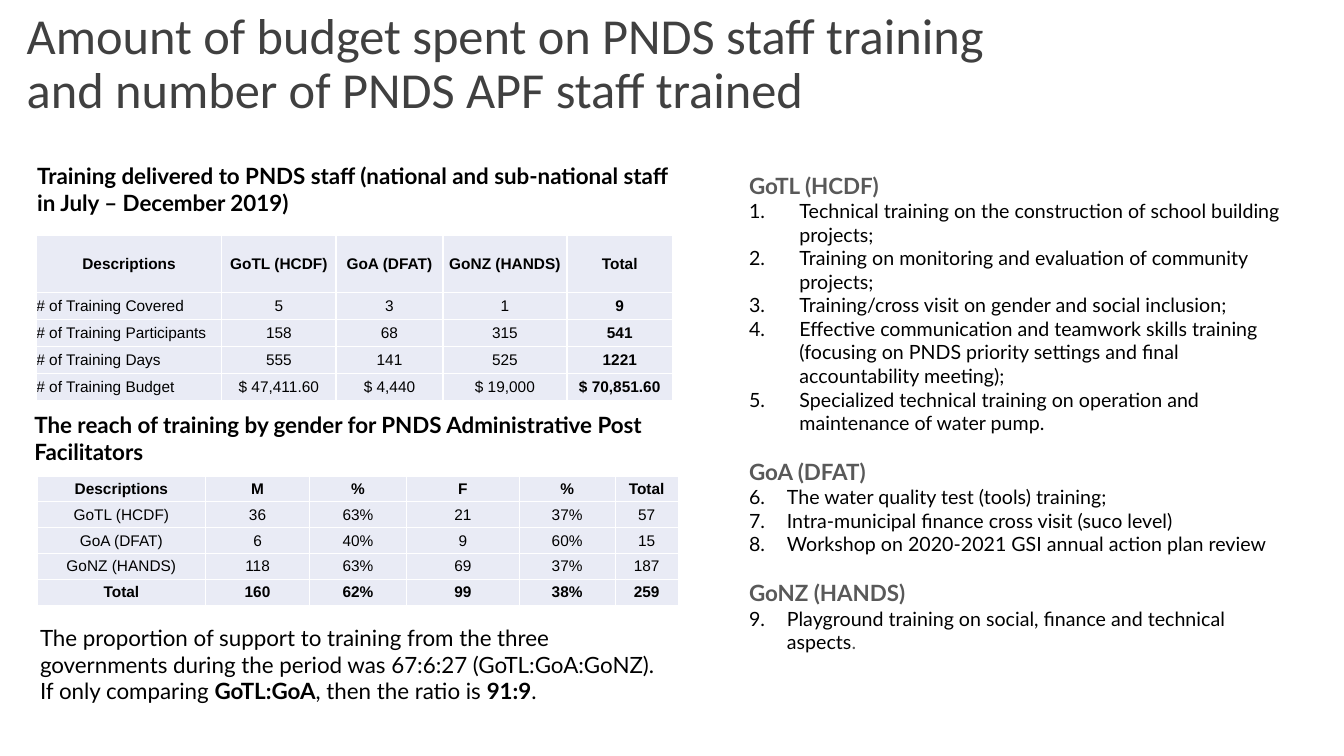
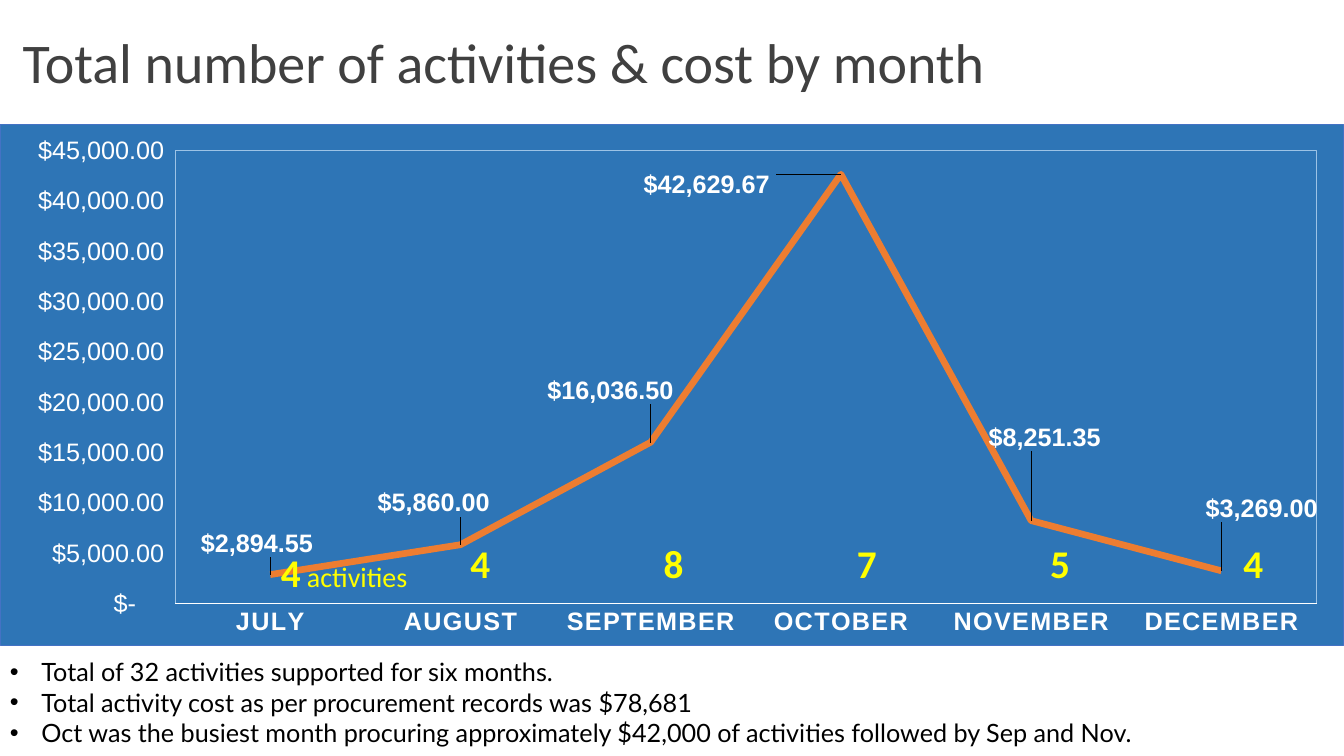
"""Build two slides on staff training budgets and monthly activity costs."""
from lxml.etree import SubElement
from pptx import Presentation
from pptx.chart.data import CategoryChartData
from pptx.dml.color import RGBColor
from pptx.enum.chart import XL_CHART_TYPE as ChartType, XL_LABEL_POSITION as LabelPos
from pptx.enum.chart import XL_TICK_MARK as TickMark
from pptx.enum.text import MSO_ANCHOR as Anchor, MSO_AUTO_SIZE as AutoSize, PP_ALIGN as Align
from pptx.oxml import parse_xml
from pptx.oxml.ns import nsdecls, qn
from pptx.util import Pt

BLACK, WHITE, DARK, GREY = "000000", "FFFFFF", "404040", "595959"
CELL, YELLOW, ORANGE = "E9EBF5", "FFFF00", "ED7D31"
CHART_BLUE, CHART_EDGE, PLOT_EDGE = "2E75B6", "4472C4", "9DC3E6"
MONEY = '_("$"* #,##0.00_);_("$"* \\(#,##0.00\\);_("$"* "-"??_);_(@_)'

STAFF_TITLE = "Amount of budget spent on PNDS staff training\vand number of PNDS APF staff trained"
DELIVERED = "Training delivered to PNDS staff (national and sub-national staff in July – December 2019)"
REACH = "The reach of training by gender for PNDS Administrative Post Facilitators"
PROPORTION = [
    "The proportion of support to training from the three governments during the period "
    "was 67:6:27 (GoTL:GoA:GoNZ).",
    [("If only comparing ", {}), ("GoTL:GoA", {"bold": True}), (", then the ratio is ", {}),
     ("91:9", {"bold": True}), (".", {})],
]
TRAINING = [
    ["Descriptions", "GoTL (HCDF)", "GoA (DFAT)", "GoNZ (HANDS)", "Total"],
    ["# of Training Covered", "5", "3", "1", "9"],
    ["# of Training Participants", "158", "68", "315", "541"],
    ["# of Training Days", "555", "141", "525", "1221"],
    ["# of Training Budget", "$ 47,411.60", "$ 4,440", "$ 19,000", "$ 70,851.60"],
]
GENDER = [
    ["Descriptions", "M", "%", "F", "%", "Total"],
    ["GoTL (HCDF)", "36", "63%", "21", "37%", "57"],
    ["GoA (DFAT)", "6", "40%", "9", "60%", "15"],
    ["GoNZ (HANDS)", "118", "63%", "69", "37%", "187"],
    ["Total", "160", "62%", "99", "38%", "259"],
]
COURSES = [
    ("GoTL (HCDF)", 36, [
        "Technical training on the construction of school building projects;",
        "Training on monitoring and evaluation of community projects;",
        "Training/cross visit on gender and social inclusion;",
        "Effective communication and teamwork skills training (focusing on PNDS priority "
        "settings and final accountability meeting);",
        "Specialized technical training on operation and maintenance of water pump."]),
    ("GoA (DFAT)", 27, [
        "The water quality test (tools) training;",
        "Intra-municipal finance cross visit (suco level)",
        "Workshop on 2020-2021 GSI annual action plan review"]),
    ("GoNZ (HANDS)", 27, [
        [("Playground training on social, finance and technical aspects", {}),
         (".", {"color": GREY})]]),
]

COST_TITLE = "Total number of activities & cost by month"
# month, cost, label shift as a share of the chart's width and height
MONTHS = [
    ("JULY", 2894.55, -0.01, -0.06),
    ("AUGUST", 5860, -0.02, -0.08),
    ("SEPTEMBER", 16036.5, -0.03, -0.1),
    ("OCTOBER", 42629.67, -0.1, 0.02),
    ("NOVEMBER", 8251.35, 0.01, -0.16),
    ("DECEMBER", 3269, 0.03, -0.12),
]
JULY_COUNT = [("4", {"bold": True}), (" activities", {"size": 20})]
LATER_COUNTS = ["4", "8", "7", "5", "4"]
FINDINGS = [
    "Total of 32 activities supported for six months.",
    "Total activity cost as per procurement records was $78,681",
    "Oct was the busiest month procuring approximately $42,000 of activities followed by "
    "Sep and Nov.",
]


def rgb(color):
    """Turn a hex string into a colour."""
    return RGBColor.from_string(color)


def style(font, size, color, bold=False, face="Lato"):
    """Format a font."""
    font.size, font.bold, font.name = Pt(size), bold, face
    font.color.rgb = rgb(color)


def write(paragraph, content, **look):
    """Fill a paragraph with a string or with (text, style changes) pairs."""
    if isinstance(content, str):
        paragraph.text = content
        for run in paragraph.runs:
            style(run.font, **look)
        return
    for text, changes in content:
        run = paragraph.add_run()
        run.text = text
        style(run.font, **{**look, **changes})


def add_text(slide, box, contents, anchor=Anchor.TOP, **look):
    """Add a text box with one paragraph per content and return its paragraphs."""
    frame = slide.shapes.add_textbox(*map(Pt, box)).text_frame
    frame.word_wrap, frame.vertical_anchor = True, anchor
    frame.auto_size = AutoSize.SHAPE_TO_FIT_TEXT
    for i, content in enumerate(contents):
        write(frame.add_paragraph() if i else frame.paragraphs[0], content, **look)
    return frame.paragraphs


def add_title(slide, left, text, size):
    """Add a slide title."""
    frame = slide.shapes.add_textbox(Pt(left), 0, Pt(960 - left), Pt(93)).text_frame
    frame.word_wrap, frame.vertical_anchor = True, Anchor.MIDDLE
    write(frame.paragraphs[0], text, size=size, color=DARK, face="Calibri")
    frame.paragraphs[0].line_spacing = 0.9


def hang(paragraph, indent, tag, **marker):
    """Give a paragraph a hanging indent and a bullet or number."""
    props = paragraph._p.get_or_add_pPr()
    props.set("marL", str(Pt(indent)))
    props.set("indent", str(-Pt(indent)))
    if tag == "a:buChar":
        SubElement(props, qn("a:buFont"), typeface="Arial")
    SubElement(props, qn(tag), **marker)


def add_grid(slide, left, top, widths, heights, rows, is_bold, is_left):
    """Add a table with white rules and evenly tinted cells."""
    table = slide.shapes.add_table(len(rows), len(widths), Pt(left), Pt(top),
                                   Pt(sum(widths)), Pt(sum(heights))).table
    table.first_row = table.horz_banding = False
    for column, width in zip(table.columns, widths):
        column.width = Pt(width)
    for r, row in enumerate(rows):
        table.rows[r].height = Pt(heights[r])
        for c, text in enumerate(row):
            cell = table.cell(r, c)
            cell.margin_left = cell.margin_right = cell.margin_top = cell.margin_bottom = 0
            cell.vertical_anchor = Anchor.MIDDLE
            for side in "LRTB":
                cell._tc.get_or_add_tcPr().append(
                    outline(WHITE, 1, f"a:ln{side}"))
            cell.fill.solid()
            cell.fill.fore_color.rgb = rgb(CELL)
            paragraph = cell.text_frame.paragraphs[0]
            write(paragraph, text, size=11, color=BLACK, bold=is_bold(r, c), face="Arial")
            paragraph.alignment = Align.LEFT if is_left(r, c) else Align.CENTER


def outline(color, width, tag="a:ln"):
    """Return a line element."""
    return parse_xml(f'<{tag} {nsdecls("a")} w="{Pt(width)}"><a:solidFill>'
                     f'<a:srgbClr val="{color}"/></a:solidFill></{tag}>')


def panel(fill, edge):
    """Return chart shape properties with a fill and an edge."""
    props = parse_xml(f'<c:spPr {nsdecls("c", "a")}><a:solidFill>'
                      f'<a:srgbClr val="{fill}"/></a:solidFill></c:spPr>')
    props.append(outline(edge, 0.75))
    return props


def manual_layout(x, y, extra=""):
    """Return a chart layout element."""
    return parse_xml(f'<c:layout {nsdecls("c")}><c:manualLayout>{extra}'
                     f'<c:x val="{x}"/><c:y val="{y}"/></c:manualLayout></c:layout>')


def add_cost_chart(slide):
    """Add the line chart of monthly cost."""
    data = CategoryChartData(number_format=MONEY)
    data.categories = [month for month, *_ in MONTHS]
    data.add_series("Series 1", [cost for _, cost, *_ in MONTHS])
    chart = slide.shapes.add_chart(ChartType.LINE, 0, Pt(88.5), Pt(960), Pt(373), data).chart
    chart.has_legend = chart.has_title = False
    style(chart.font, 8, "E7E6E6", face="Arial")

    months, costs = chart.category_axis, chart.value_axis
    costs.has_major_gridlines = False
    costs.minimum_scale, costs.maximum_scale, costs.major_unit = 0, 45000, 5000
    costs.tick_labels.number_format = MONEY
    costs.tick_labels.number_format_is_linked = False
    costs.format.line.fill.background()
    months.format.line.color.rgb = rgb(WHITE)
    months.format.line.width = Pt(1)
    for axis in (months, costs):
        axis.major_tick_mark = axis.minor_tick_mark = TickMark.NONE
        style(axis.tick_labels.font, 18, WHITE, axis is months, "Arial")
    for props in chart.element.xpath(".//c:catAx//a:defRPr"):
        props.set("spc", "100")

    plot = chart.plots[0]
    plot.vary_by_categories = False
    cost_line = plot.series[0]
    cost_line.smooth = False
    cost_line.format.line.color.rgb = rgb(ORANGE)
    cost_line.format.line.width = Pt(4.75)
    labels = cost_line.data_labels
    labels.show_value, labels.position = True, LabelPos.CENTER
    labels.number_format, labels.number_format_is_linked = MONEY, False
    style(labels.font, 18, WHITE, True, "Arial")
    for i in range(len(MONTHS)):
        label = cost_line.points[i].data_label
        label.position = LabelPos.CENTER
        style(label.font, 18, WHITE, True, "Arial")
    for index, (*_, dx, dy) in zip(chart.element.xpath(".//c:dLbl/c:idx"), MONTHS):
        index.addnext(manual_layout(dx, dy))

    area = chart.element.xpath(".//c:plotArea")[0]
    for old in area.xpath("./c:layout"):
        area.remove(old)
    frame = manual_layout(0.13, 0.05, '<c:layoutTarget val="inner"/>'
                          '<c:xMode val="edge"/><c:yMode val="edge"/>')
    for tag, share in (("c:w", 0.85), ("c:h", 0.87)):
        SubElement(frame[0], qn(tag), val=str(share))
    area.insert(0, frame)
    area.append(panel(CHART_BLUE, PLOT_EDGE))
    chart.element.xpath("./c:chart")[0].addnext(panel(CHART_BLUE, CHART_EDGE))


def add_courses(slide):
    """Add the numbered list of courses under each funder."""
    frame = slide.shapes.add_textbox(Pt(528), Pt(119.5), Pt(405), Pt(353.5)).text_frame
    frame.word_wrap, frame.auto_size = True, AutoSize.SHAPE_TO_FIT_TEXT
    number = 1
    for funder, indent, courses in COURSES:
        heading = frame.paragraphs[0] if number == 1 else frame.add_paragraph()
        write(heading, funder, size=16, color=GREY, bold=True)
        heading.space_before = Pt(0 if number == 1 else 17)
        for course in courses:
            item = frame.add_paragraph()
            write(item, course, size=14, color=BLACK)
            hang(item, indent, "a:buAutoNum", type="arabicPeriod", startAt=str(number))
        number += len(courses)


def build_training(slide):
    """Fill the slide on training budget and staff."""
    add_title(slide, 12, STAFF_TITLE, 36)
    add_text(slide, (21.5, 442, 472, 65.5), PROPORTION, size=16, color=BLACK)
    add_courses(slide)
    for left, top, heading in ((19.5, 112.5, DELIVERED), (17.5, 290, REACH)):
        add_text(slide, (left, top, 472, 46), [heading], size=16, color=BLACK, bold=True)
    add_grid(slide, 26, 168.5, [132.5, 81.5, 76.5, 88.5, 75.5], [40.5] + [19.25] * 4, TRAINING,
             lambda r, c: r == 0 or c == 4, lambda r, c: r > 0 and c == 0)
    add_grid(slide, 26.5, 340, [120.5, 74, 69.5, 80.5, 68.5, 45], [18.5] * 5, GENDER,
             lambda r, c: r in (0, 4), lambda r, c: False)


def build_costs(slide):
    """Fill the slide on monthly activities and cost."""
    add_title(slide, 9, COST_TITLE, 40)
    add_cost_chart(slide)
    for finding in add_text(slide, (0, 465, 960, 73), FINDINGS, Anchor.MIDDLE,
                            size=18, color=BLACK):
        hang(finding, 22.5, "a:buChar", char="•")
    count = {"size": 28, "color": YELLOW, "face": "Calibri"}
    add_text(slide, (193.5, 388, 152.5, 41), [JULY_COUNT], **count)
    for i, activities in enumerate(LATER_COUNTS):
        add_text(slide, (329 + 138 * i, 381.5, 61, 41), [activities], bold=True, **count)


def main():
    """Build and save the presentation."""
    deck = Presentation()
    deck.slide_width, deck.slide_height = Pt(960), Pt(540)
    for build in (build_training, build_costs):
        build(deck.slides.add_slide(deck.slide_layouts[6]))
    deck.save("out.pptx")


if __name__ == "__main__":
    main()
